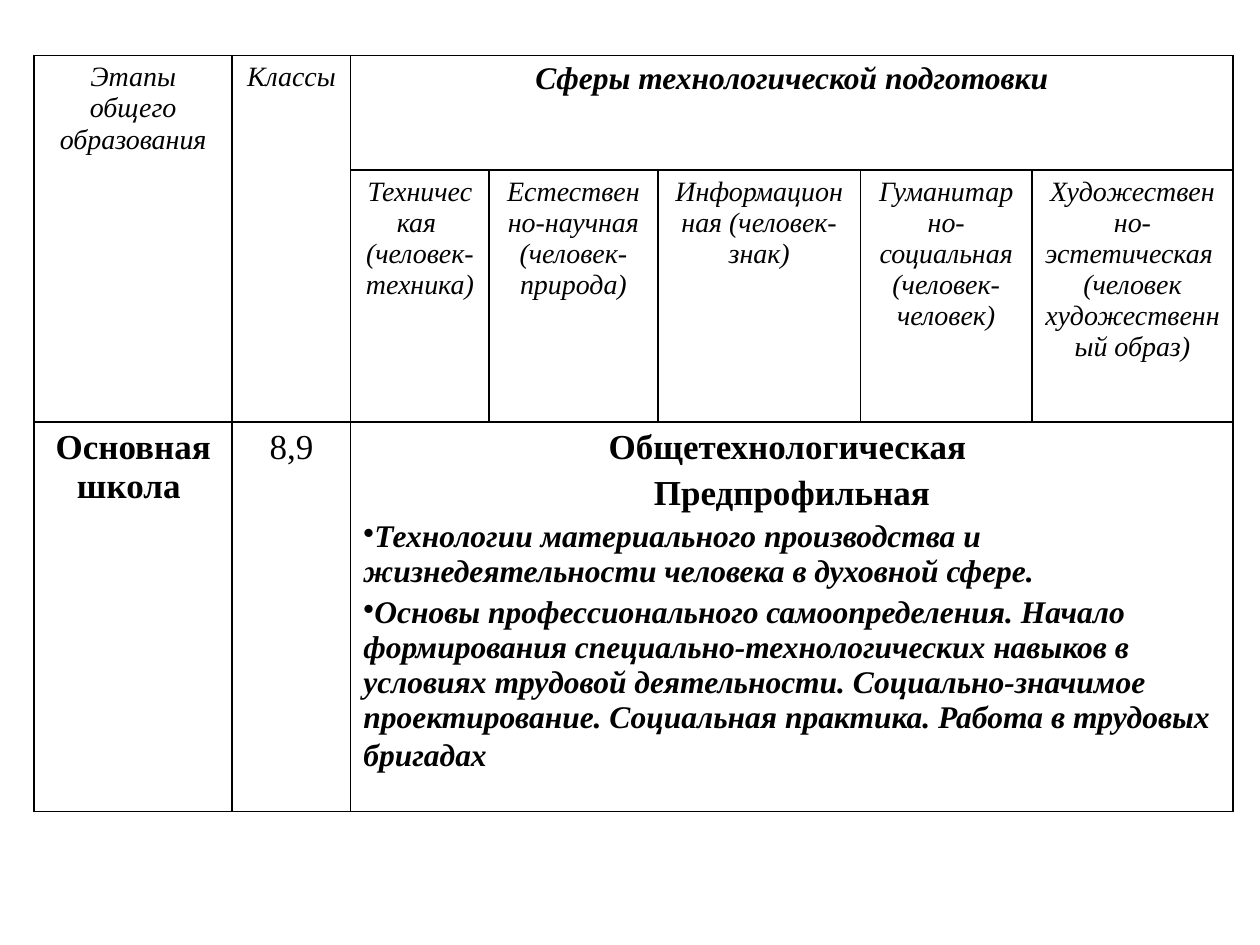
from lxml.etree import SubElement
from pptx import Presentation
from pptx.dml.color import RGBColor as Rgb
from pptx.enum.text import PP_ALIGN as Align
from pptx.oxml.ns import qn
from pptx.util import Cm, Pt

COLORS = {"text": "000000", "border": "000000"}
FONT = "Times New Roman"
COLUMNS = [3.99, 2.39, 2.79, 3.4, 4.09, 3.45, 4.06]
ROWS = [2.31, 5.08, 7.85]

# Text formats
LABEL = {"size": Pt(16), "italic": True, "bold": False}
HEADING = {"size": Pt(18), "italic": True, "bold": True}
STAGE = {"size": Pt(20), "italic": False, "bold": True}
PLAIN = {"size": Pt(20), "italic": False, "bold": False}

SPHERES = [
    ["Техническая ", "(человек-техника)"],
    ["Естественно-научная", "(человек- природа)"],
    ["Информационная (человек-знак)"],
    ["Гуманитарно-социальная (человек-человек)"],
    ["Художественно-эстетическая ", "(человек художественный образ)"],
]
TOPICS = [
    "Технологии материального производства и жизнедеятельности человека "
    "в духовной сфере.",
    "Основы профессионального самоопределения. Начало формирования "
    "специально-технологических навыков в условиях трудовой деятельности. "
    "Социально-значимое проектирование. Социальная практика. "
    "Работа в трудовых бригадах",
]


class Builder:
    """Holds the style and the current slide."""

    def __init__(self, page):
        self.page = page

    def table(self, left, top, columns, rows):
        frame = self.page.shapes.add_table(
            len(rows), len(columns), Cm(left), Cm(top),
            Cm(sum(columns)), Cm(sum(rows)))
        table = frame.table
        table.first_row = table.horz_banding = False
        for column, width in zip(table.columns, columns):
            column.width = Cm(width)
        for row, height in zip(table.rows, rows):
            row.height = Cm(height)
        for cell in table.iter_cells():
            cell.fill.background()
            self.borders(cell)
        return table

    def borders(self, cell, width=1):
        props = cell._tc.get_or_add_tcPr()
        for index, side in enumerate("LRTB"):
            line = SubElement(props, qn(f"a:ln{side}"), w=str(Pt(width)))
            fill = SubElement(line, qn("a:solidFill"))
            SubElement(fill, qn("a:srgbClr"), val=COLORS["border"])
            props.insert(index, line)

    def span(self, para, text, style):
        span = para.add_run()
        span.text = text
        for name, value in style.items():
            setattr(span.font, name, value)
        span.font.name = FONT
        span.font.color.rgb = Rgb.from_string(COLORS["text"])

    def para(self, cell, text, style, align=Align.CENTER, before=0):
        frame = cell.text_frame
        para = frame.paragraphs[0]
        if para.runs:
            para = frame.add_paragraph()
        para.alignment = align
        para.space_before = Pt(before)
        self.span(para, text, style)
        return para

    def bullet(self, cell, text, style, before):
        para = self.para(cell, text, style, Align.LEFT, before)
        props = para._p.get_or_add_pPr()
        props.set("marL", "0")
        props.set("indent", "0")
        SubElement(props, qn("a:buChar"), char="•")
        return para


def main():
    deck = Presentation()
    deck.slide_width, deck.slide_height = Cm(25.4), Cm(19.05)
    builder = Builder(deck.slides.add_slide(deck.slide_layouts[6]))
    table = builder.table(0.69, 1.12, COLUMNS, ROWS)

    # Merged areas
    for first, last in [((0, 0), (1, 0)), ((0, 1), (1, 1)),
                        ((0, 2), (0, 6)), ((2, 2), (2, 6))]:
        table.cell(*first).merge(table.cell(*last))

    # Header rows
    builder.para(table.cell(0, 0), "Этапы общего образования", LABEL)
    builder.para(table.cell(0, 1), "Классы", LABEL)
    builder.para(table.cell(0, 2), "Сферы технологической подготовки", HEADING)
    for column, lines in enumerate(SPHERES, start=2):
        for line in lines:
            builder.para(table.cell(1, column), line, LABEL)

    # School stage row
    builder.para(table.cell(2, 0), "Основная школа ", STAGE)
    builder.para(table.cell(2, 1), "8,9", PLAIN)
    content = table.cell(2, 2)
    for line in ["Общетехнологическая ", "Предпрофильная"]:
        builder.para(content, line, STAGE, before=4)
    for topic in TOPICS:
        para = builder.bullet(content, topic, HEADING, before=3.6)
    builder.span(para, " ", PLAIN)

    deck.save("out.pptx")


if __name__ == "__main__":
    main()
